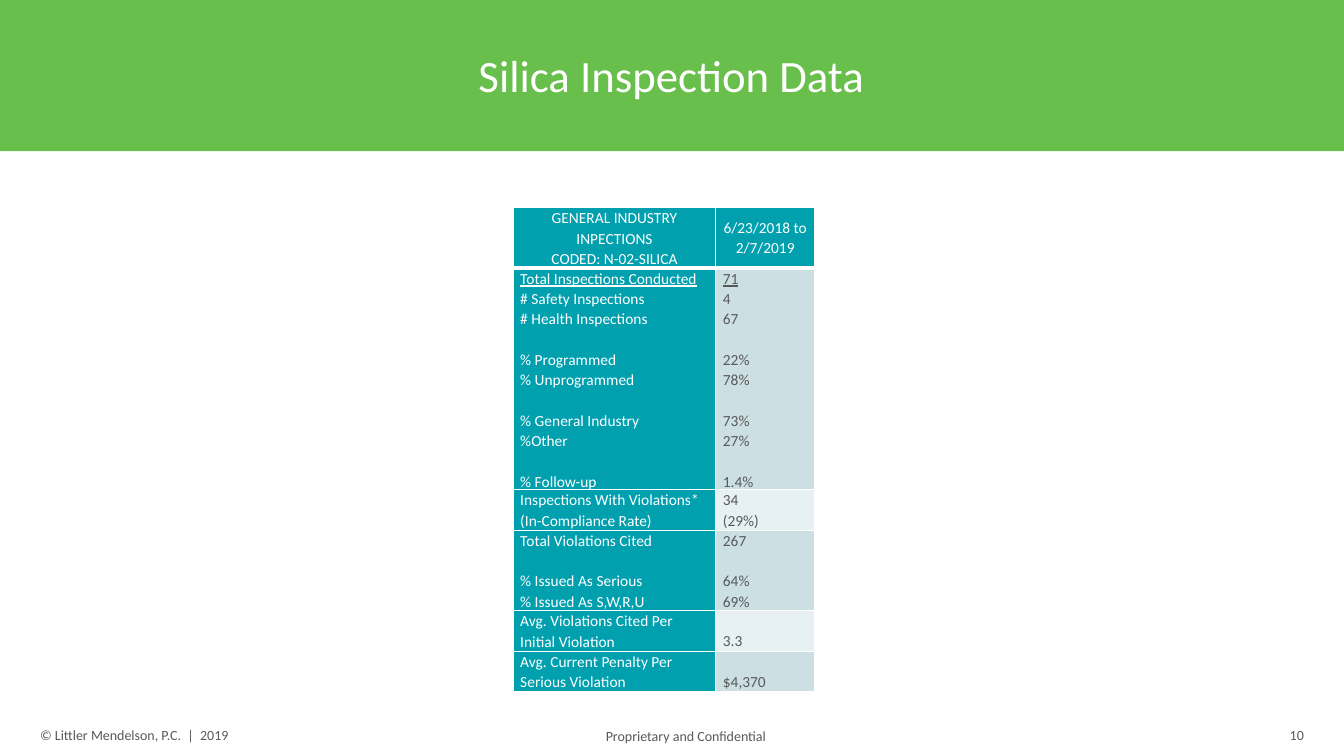
from lxml.etree import SubElement
from pptx import Presentation
from pptx.dml.color import RGBColor
from pptx.enum.shapes import MSO_SHAPE
from pptx.enum.text import MSO_ANCHOR, PP_ALIGN
from pptx.oxml.ns import qn
from pptx.util import Inches, Pt

WHITE = RGBColor(0xFF, 0xFF, 0xFF)
GRAY = RGBColor(0x58, 0x59, 0x5B)
GREEN = RGBColor(0x69, 0xBF, 0x4B)
TEAL = RGBColor(0x00, 0xA0, 0xAF)
BANDS = [RGBColor(0xCC, 0xDF, 0xE3), RGBColor(0xE7, 0xF0, 0xF2)]

LINE_HEIGHT = 0.2
GROUP_GAP = Pt(14.5)
CELL_FORMAT = {
    "margin_left": Inches(0.07),
    "margin_right": Inches(0.07),
    "margin_top": 0,
    "margin_bottom": 0,
}
COLUMN_WIDTHS = [2.01, 0.98]
HEADER = [
    ["GENERAL INDUSTRY INPECTIONS", "CODED: N-02-SILICA"],
    ["6/23/2018 to", "2/7/2019"],
]
HEADER_LINES = 3
SECTIONS = [
    [
        [("Total Inspections Conducted", "71"), ("# Safety Inspections", "4"),
         ("# Health Inspections", "67")],
        [("% Programmed", "22%"), ("% Unprogrammed", "78%")],
        [("% General Industry", "73%"), ("%Other", "27%")],
        [("% Follow-up", "1.4%")],
    ],
    [[("Inspections With Violations*", "34"), ("(In-Compliance Rate)", "(29%)")]],
    [
        [("Total Violations Cited", "267")],
        [("% Issued As Serious", "64%"), ("% Issued As S,W,R,U", "69%")],
    ],
    [[("Avg. Violations Cited Per Initial Violation", "3.3")]],
    [[("Avg. Current Penalty Per Serious Violation", "$4,370")]],
]


def apply_format(target, values):
    for name, value in values.items():
        setattr(target, name, value)


def style_paragraph(paragraph, size, color, alignment, spacing, underline=False):
    apply_format(paragraph, {"alignment": alignment, "line_spacing": spacing})
    apply_format(paragraph.font, {
        "name": "Calibri", "size": Pt(size), "bold": False, "underline": underline,
    })
    paragraph.font.color.rgb = color


def add_text(slide, box, text, size, color, alignment=PP_ALIGN.LEFT,
             anchor=MSO_ANCHOR.TOP, spacing=1.0):
    shape = slide.shapes.add_textbox(*map(Inches, box))
    apply_format(shape.text_frame, {
        "word_wrap": True, "vertical_anchor": anchor, "text": text,
    })
    style_paragraph(shape.text_frame.paragraphs[0], size, color, alignment, spacing)


def add_title_band(slide):
    shape = slide.shapes.add_shape(MSO_SHAPE.RECTANGLE, 0, 0, Inches(13.33), Inches(1.5))
    shape.shadow.inherit = False
    shape.fill.solid()
    shape.fill.fore_color.rgb = GREEN
    shape.line.fill.background()


def add_borders(cell, bottom_width):
    properties = cell._tc.get_or_add_tcPr()
    widths = {"a:lnL": 1, "a:lnR": 1, "a:lnT": 1, "a:lnB": bottom_width}
    for tag, width in widths.items():
        line = SubElement(properties, qn(tag), w=str(Pt(width)))
        fill = SubElement(line, qn("a:solidFill"))
        SubElement(fill, qn("a:srgbClr"), val=str(WHITE))


def fill_cell(cell, groups, fill_color, text_color, alignment=PP_ALIGN.LEFT,
              anchor=MSO_ANCHOR.TOP, underline_first=False, bottom_width=1):
    apply_format(cell, {**CELL_FORMAT, "vertical_anchor": anchor})
    add_borders(cell, bottom_width)
    cell.fill.solid()
    cell.fill.fore_color.rgb = fill_color
    cell.text = "\n".join(text for group in groups for text in group)
    paragraphs = iter(cell.text_frame.paragraphs)
    for group_index, group in enumerate(groups):
        for text_index, _ in enumerate(group):
            paragraph = next(paragraphs)
            is_first = group_index == 0 and text_index == 0
            style_paragraph(paragraph, 11, text_color, alignment, 1.07,
                            underline_first and is_first)
            if group_index > 0 and text_index == 0:
                paragraph.space_before = GROUP_GAP


def count_lines(section):
    return max(2, sum(len(group) for group in section) + len(section) - 1)


def add_inspection_table(slide):
    line_counts = [HEADER_LINES] + [count_lines(section) for section in SECTIONS]
    frame = slide.shapes.add_table(
        len(line_counts), len(COLUMN_WIDTHS), Inches(5.09), Inches(2.06),
        Inches(sum(COLUMN_WIDTHS)), Inches(sum(line_counts) * LINE_HEIGHT))
    table = frame.table
    apply_format(table, {"first_row": False, "horz_banding": False})
    for column, width in zip(table.columns, COLUMN_WIDTHS):
        column.width = Inches(width)
    for row, count in zip(table.rows, line_counts):
        row.height = Inches(count * LINE_HEIGHT)
    for column, texts in enumerate(HEADER):
        fill_cell(table.cell(0, column), [texts], TEAL, WHITE, PP_ALIGN.CENTER,
                  MSO_ANCHOR.MIDDLE, bottom_width=3)
    for index, section in enumerate(SECTIONS):
        labels, values = (
            [[pair[side] for pair in group] for group in section] for side in (0, 1))
        underline = index == 0
        wraps = len(section) == 1 and len(section[0]) == 1
        anchor = MSO_ANCHOR.BOTTOM if wraps else MSO_ANCHOR.TOP
        fill_cell(table.cell(index + 1, 0), labels, TEAL, WHITE,
                  underline_first=underline)
        fill_cell(table.cell(index + 1, 1), values, BANDS[index % 2], GRAY,
                  anchor=anchor, underline_first=underline)


def main():
    presentation = Presentation()
    apply_format(presentation, {
        "slide_width": Inches(13.33), "slide_height": Inches(7.5),
    })
    slide = presentation.slides.add_slide(presentation.slide_layouts[6])
    add_title_band(slide)
    add_text(slide, (0.3, 0.14, 12.72, 1.27), "Silica Inspection Data", 32, WHITE,
             PP_ALIGN.CENTER, MSO_ANCHOR.MIDDLE, 0.9)
    add_inspection_table(slide)
    add_text(slide, (0.3, 7.16, 3.37, 0.27), "© Littler Mendelson, P.C.  |  2019", 10, GRAY)
    add_text(slide, (5.91, 7.17, 1.81, 0.27), "Proprietary and Confidential", 10, GRAY)
    add_text(slide, (9.92, 7.17, 3.11, 0.25), "10", 10, GRAY,
             PP_ALIGN.RIGHT, MSO_ANCHOR.MIDDLE)
    presentation.save("out.pptx")


if __name__ == "__main__":
    main()
